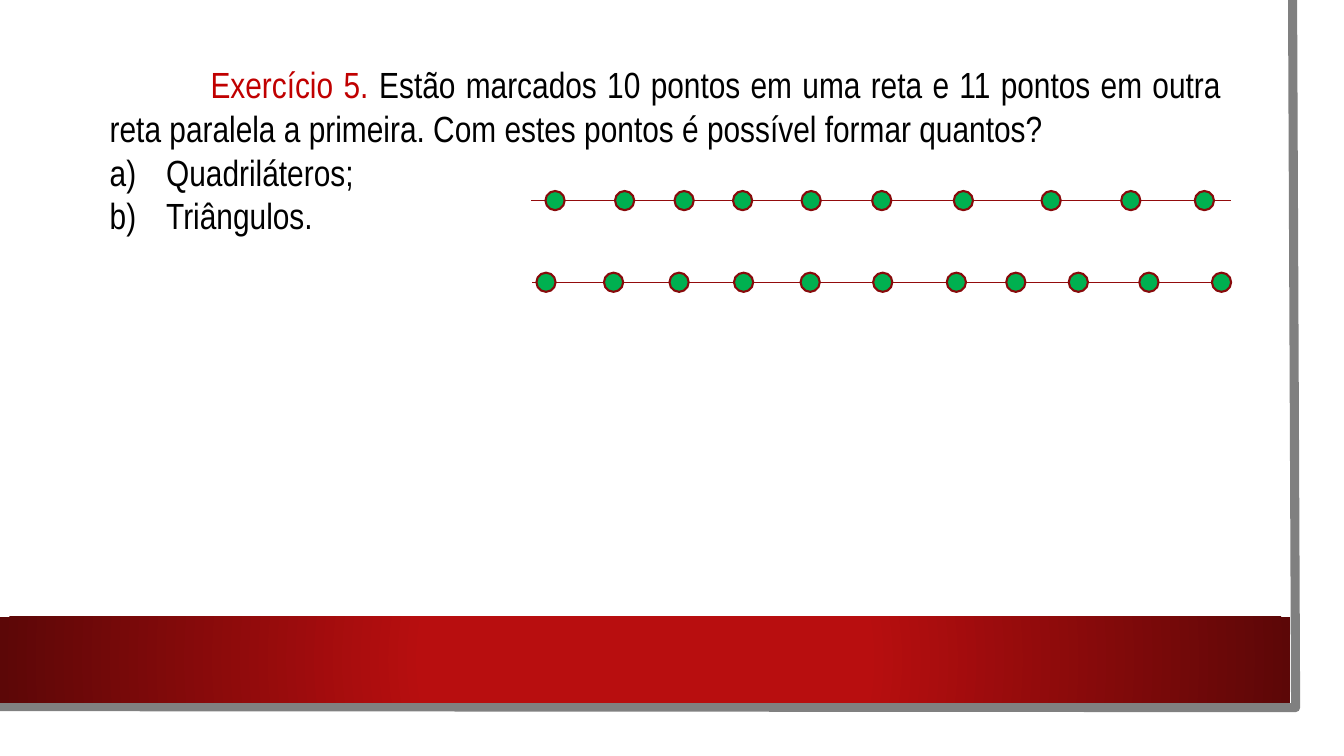
from lxml import etree
from pptx import Presentation
from pptx.dml.color import RGBColor
from pptx.enum.shapes import MSO_CONNECTOR, MSO_SHAPE
from pptx.enum.text import PP_ALIGN
from pptx.oxml.ns import qn
from pptx.util import Inches, Pt

LINE = MSO_CONNECTOR.STRAIGHT
RECT = MSO_SHAPE.RECTANGLE
OVAL = MSO_SHAPE.OVAL
JUSTIFY = PP_ALIGN.JUSTIFY
DOT = 0.19
ROWS = [
    (5.27, 1.99, [5.41, 6.1, 6.69, 7.27, 7.95, 8.65, 9.46, 10.33, 11.12, 11.85]),
    (5.28, 2.8, [5.32, 5.99, 6.64, 7.28, 7.94, 8.66, 9.39, 9.98, 10.6, 11.3, 12.02]),
]


def rgb(color):
    """Turn a hex string into a colour."""
    return RGBColor.from_string(color)


def stroke(shape, color, width):
    """Give a shape a solid outline."""
    shape.line.color.rgb = rgb(color)
    shape.line.width = Pt(width)


def add_shape(slide, kind, x, y, w, h, fill):
    """Add a filled shape without outline or shadow."""
    shape = slide.shapes.add_shape(kind, Inches(x), Inches(y), Inches(w), Inches(h))
    shape.shadow.inherit = False
    shape.fill.solid()
    shape.fill.fore_color.rgb = rgb(fill)
    shape.line.fill.background()
    return shape


def add_edge(slide):
    """Draw the grey edge of the sheet."""
    build = slide.shapes.build_freeform(Inches(12.82), 0)
    build.add_line_segments(
        [(Inches(12.85), Inches(7.02)), (Inches(-0.03), Inches(7.01))], close=False)
    edge = build.convert_to_shape()
    edge.shadow.inherit = False
    edge.fill.background()
    stroke(edge, "808080", 6.5)


def add_band(slide):
    """Draw the red band with its radial gradient."""
    fill = add_shape(slide, RECT, 0, 6.12, 12.8, 0.85, "B80E0F").fill
    fill.gradient()
    for stop, (place, color) in zip(fill.gradient_stops, [(0.34, "B80E0F"), (1, "5C0707")]):
        stop.position = place
        stop.color.rgb = rgb(color)
    grad = slide.shapes[-1]._element.spPr.find(qn("a:gradFill"))
    grad.remove(grad.find(qn("a:lin")))
    radial = etree.SubElement(grad, qn("a:path"), {"path": "circle"})
    etree.SubElement(radial, qn("a:fillToRect"), dict.fromkeys("ltrb", "50000"))


def add_text(par, text, size=26, color="000000", font="Arial Narrow"):
    """Add a formatted run to a paragraph."""
    run = par.add_run()
    run.text = text
    run.font.size = Pt(size)
    run.font.name = font
    run.font.color.rgb = rgb(color)


def add_item(frame, text):
    """Add a lettered answer item."""
    par = frame.add_paragraph()
    par.alignment = JUSTIFY
    props = par._p.get_or_add_pPr()
    props.set("marL", str(Inches(0.56)))
    props.set("indent", str(Inches(-0.56)))
    etree.SubElement(props, qn("a:buFont"), {"typeface": "Arial Narrow"})
    etree.SubElement(props, qn("a:buAutoNum"), {"type": "alphaLcParenR"})
    add_text(par, text)


def add_task(slide):
    """Write the exercise and its two items."""
    box = slide.shapes.add_textbox(Inches(0.99), Inches(0.57), Inches(11.23), Inches(3.16))
    frame = box.text_frame
    frame.word_wrap = True
    par = frame.paragraphs[0]
    par.alignment = JUSTIFY
    par._p.get_or_add_pPr().set("indent", str(Inches(1)))
    add_text(par, "Exercício 5. ", color="C00000")
    add_text(par, "Estão marcados 10 pontos em uma reta e 11 pontos em outra reta "
                  "paralela a primeira. Com estes pontos é possível formar quantos?")
    for text in ("Quadriláteros;", "Triângulos."):
        add_item(frame, text)


def add_row(slide, left, y, dots):
    """Draw a straight line with its marked points."""
    line = slide.shapes.add_connector(
        LINE, Inches(left), Inches(y), Inches(left + 6.94), Inches(y))
    stroke(line, "930B0C", 0.75)
    etree.SubElement(line._element.spPr, qn("a:effectLst"))
    for x in dots:
        dot = add_shape(slide, OVAL, x, y - DOT / 2, DOT, DOT, "00B050")
        stroke(dot, "880A0B", 1.5)


def main():
    """Build the slide and save it."""
    deck = Presentation()
    deck.slide_width = Inches(13.33)
    deck.slide_height = Inches(7.5)
    slide = deck.slides.add_slide(deck.slide_layouts[6])
    add_shape(slide, RECT, 0, 0, 13.1, 7.27, "FFFFFF")
    add_edge(slide)
    add_band(slide)
    add_task(slide)
    for left, y, dots in ROWS:
        add_row(slide, left, y, dots)
    deck.save("out.pptx")


if __name__ == "__main__":
    main()
